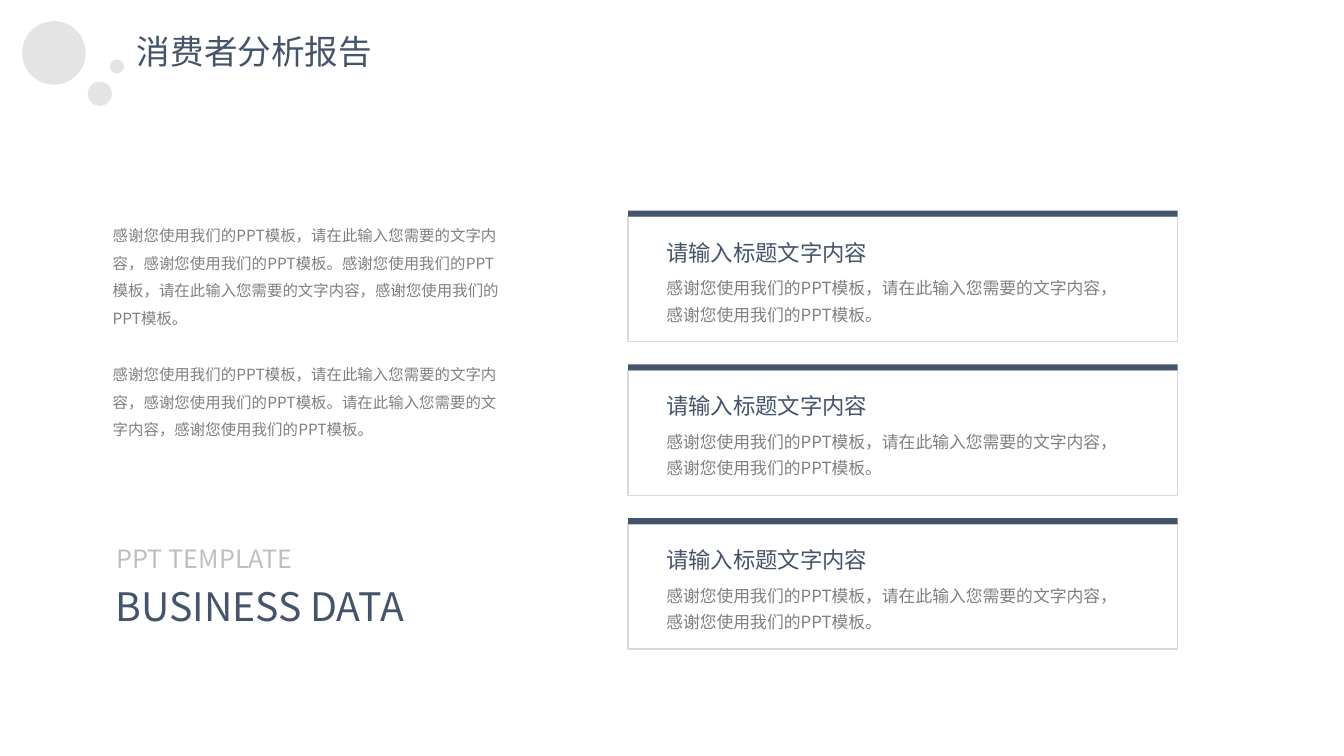
from dataclasses import dataclass

from lxml.etree import SubElement
from pptx import Presentation
from pptx.dml.color import RGBColor
from pptx.enum.shapes import MSO_SHAPE
from pptx.enum.text import MSO_AUTO_SIZE
from pptx.oxml.ns import qn
from pptx.util import Inches, Pt


@dataclass(frozen=True)
class Theme:
    """Colours, type sizes and font of the slide."""
    navy: str = "44546A"
    grey: str = "808080"
    pale: str = "D9D9D9"
    silver: str = "BFBFBF"
    font: str = "Noto Sans CJK SC"
    title: int = 24
    brand: int = 28
    label: int = 18
    head: int = 16
    body: int = 12
    small: int = 11


THEME = Theme()
BUBBLES = [(0.22, 0.21, 0.63), (0.87, 0.81, 0.24), (1.09, 0.59, 0.14)]
HEAD = "请输入标题文字内容"
THANKS = "感谢您使用我们的PPT模板"
ASK = "请在此输入您需要的文字内容"
BODY = f"{THANKS}，{ASK}，{THANKS}。"
INTRO = [BODY + BODY, f"{BODY}{ASK}，{THANKS}。"]


def add_shape(slide, kind, box, fill=None, line=None, alpha=None):
    """Add a flat shape with an optional fill, outline and opacity in percent."""
    shape = slide.shapes.add_shape(kind, *map(Inches, box))
    shape.shadow.inherit = False
    if fill:
        shape.fill.solid()
        shape.fill.fore_color.rgb = RGBColor.from_string(fill)
    else:
        shape.fill.background()
    if line:
        shape.line.color.rgb = RGBColor.from_string(line)
        shape.line.width = Pt(1)
    else:
        shape.line.fill.background()
    if alpha:
        color = shape.fill._xPr.find(f".//{qn('a:srgbClr')}")
        SubElement(color, qn("a:alpha"), val=str(alpha * 1000))


def add_text(slide, box, texts, size, color, wrap=False, lead=None, gap=0):
    """Add a text box with one paragraph for each text."""
    shape = slide.shapes.add_textbox(*map(Inches, box))
    frame = shape.text_frame
    frame.text = "\n".join(texts)
    frame.word_wrap = wrap
    frame.auto_size = MSO_AUTO_SIZE.SHAPE_TO_FIT_TEXT
    for index, para in enumerate(frame.paragraphs):
        para.font.size = Pt(size)
        para.font.name = THEME.font
        para.font.color.rgb = RGBColor.from_string(color)
        SubElement(para.font._rPr, qn("a:ea"), typeface=THEME.font)
        if lead:
            para.line_spacing = lead
        if index and gap:
            para.space_before = Pt(gap)


def add_card(slide, top):
    """Add an outlined card with a dark top bar, a heading and a body."""
    left, width, bar = 6.23, 5.45, 0.06
    add_shape(slide, MSO_SHAPE.RECTANGLE, (left, top + bar, width, 1.24),
              line=THEME.pale)
    add_text(slide, (6.51, top + 0.56, 4.52, 0.58), [BODY],
             THEME.body, THEME.grey, wrap=True, lead=1.3)
    add_text(slide, (6.51, top + 0.23, 2.22, 0.37), [HEAD],
             THEME.head, THEME.navy)
    add_shape(slide, MSO_SHAPE.RECTANGLE, (left, top, width, bar),
              fill=THEME.navy)


def main():
    """Build the slide and save it."""
    deck = Presentation()
    deck.slide_width, deck.slide_height = Inches(13.33), Inches(7.5)
    slide = deck.slides.add_slide(deck.slide_layouts[6])
    for left, top, size in BUBBLES:
        add_shape(slide, MSO_SHAPE.FLOWCHART_CONNECTOR,
                  (left, top, size, size), fill=THEME.pale, alpha=70)
    add_text(slide, (1.26, 0.26, 2.56, 0.5), ["消费者分析报告"],
             THEME.title, THEME.navy)
    for row in range(3):
        add_card(slide, 2.09 + row * 3.05 / 2)
    add_text(slide, (1.05, 5.73, 3.29, 0.57), ["BUSINESS DATA"],
             THEME.brand, THEME.navy)
    add_text(slide, (1.06, 5.34, 1.98, 0.4), ["PPT TEMPLATE"],
             THEME.label, THEME.silver)
    add_text(slide, (1.02, 2.1, 4.06, 2.28), INTRO,
             THEME.small, THEME.grey, wrap=True, lead=1.5, gap=20)
    deck.save("out.pptx")


if __name__ == "__main__":
    main()
